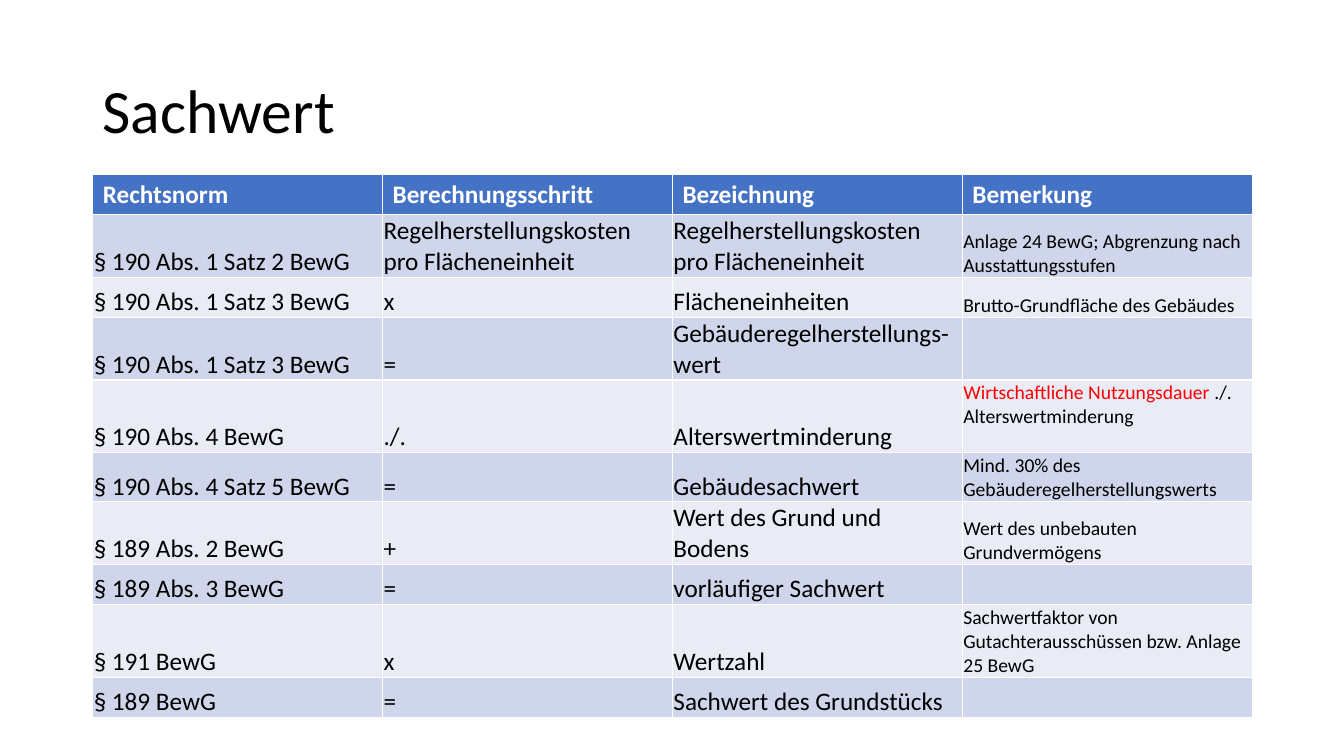
from pptx import Presentation
from pptx.dml.color import RGBColor
from pptx.enum.text import MSO_ANCHOR
from pptx.util import Inches, Pt

TOP, MIDDLE, BOTTOM = MSO_ANCHOR.TOP, MSO_ANCHOR.MIDDLE, MSO_ANCHOR.BOTTOM
BLACK = RGBColor(0x00, 0x00, 0x00)
WHITE = RGBColor(0xFF, 0xFF, 0xFF)
RED = RGBColor(0xFF, 0x00, 0x00)
BLUE = RGBColor(0x44, 0x72, 0xC4)
BANDS = RGBColor(0xE9, 0xEB, 0xF5), RGBColor(0xCF, 0xD5, 0xEA)
FONT = "Calibri"

COST = "Regelherstellungskosten pro Flächeneinheit"
HEADS = "Rechtsnorm", "Berechnungsschritt", "Bezeichnung", "Bemerkung"
STEPS = [
    (0.62, "§ 190 Abs. 1 Satz 2 BewG", COST, COST,
     "Anlage 24 BewG; Abgrenzung nach Ausstattungsstufen"),
    (0.4, "§ 190 Abs. 1 Satz 3 BewG", "x", "Flächeneinheiten",
     "Brutto-Grundfläche des Gebäudes"),
    (0.62, "§ 190 Abs. 1 Satz 3 BewG", "=", "Gebäuderegelherstellungs-wert", ""),
    (0.72, "§ 190 Abs. 4 BewG", "./.", "Alterswertminderung",
     "Wirtschaftliche Nutzungsdauer |./. Alterswertminderung"),
    (0.49, "§ 190 Abs. 4 Satz 5 BewG", "=", "Gebäudesachwert",
     "Mind. 30% des Gebäuderegelherstellungswerts"),
    (0.62, "§ 189 Abs. 2 BewG", "+", "Wert des Grund und Bodens",
     "Wert des unbebauten Grundvermögens"),
    (0.4, "§ 189 Abs. 3 BewG", "=", "vorläufiger Sachwert", ""),
    (0.72, "§ 191 BewG", "x", "Wertzahl",
     "Sachwertfaktor von Gutachterausschüssen bzw. Anlage 25 BewG"),
    (0.4, "§ 189 BewG", "=", "Sachwert des Grundstücks", ""),
]


def style(para, size, color, bold=False):
    font = para.font
    font.name, font.size, font.bold = FONT, Pt(size), bold
    font.color.rgb = color


def paint(cell, color):
    cell.fill.solid()
    cell.fill.fore_color.rgb = color


def add_title(slide, left, top, width, height):
    box = slide.shapes.add_textbox(
        Inches(left), Inches(top), Inches(width), Inches(height))
    frame = box.text_frame
    frame.word_wrap = True
    frame.vertical_anchor = MIDDLE
    para = frame.paragraphs[0]
    para.text = "Sachwert"
    para.line_spacing = 0.9
    style(para, 44, BLACK)


def fill_step(cell, text, size):
    if not text:
        return
    cell.margin_left = cell.margin_right = cell.margin_top = Inches(0.01)
    cell.margin_bottom = 0
    alert, mark, rest = text.rpartition("|")
    cell.vertical_anchor = TOP if mark else BOTTOM
    para = cell.text_frame.paragraphs[0]
    if alert:
        run = para.add_run()
        run.text = alert
        run.font.color.rgb = RED
    para.add_run().text = rest
    style(para, size, BLACK)


def add_steps(slide, left, top, width):
    heights = [0.4] + [step[0] for step in STEPS]
    table = slide.shapes.add_table(
        len(heights), len(HEADS), Inches(left), Inches(top),
        Inches(width), Inches(sum(heights))).table
    for row, height in zip(table.rows, heights):
        row.height = Inches(height)
    for col, head in enumerate(HEADS):
        cell = table.cell(0, col)
        paint(cell, BLUE)
        cell.text = head
        style(cell.text_frame.paragraphs[0], 18, WHITE, True)
    for row, step in enumerate(STEPS, 1):
        for col, text in enumerate(step[1:]):
            cell = table.cell(row, col)
            paint(cell, BANDS[row % 2])
            fill_step(cell, text, 14 if col == 3 else 18)


def main():
    deck = Presentation()
    deck.slide_width, deck.slide_height = Inches(13.33), Inches(7.5)
    slide = deck.slides.add_slide(deck.slide_layouts[6])
    add_title(slide, 0.92, 0.4, 11.5, 1.45)
    add_steps(slide, 0.92, 1.73, 11.5)
    deck.save("out.pptx")


if __name__ == "__main__":
    main()
